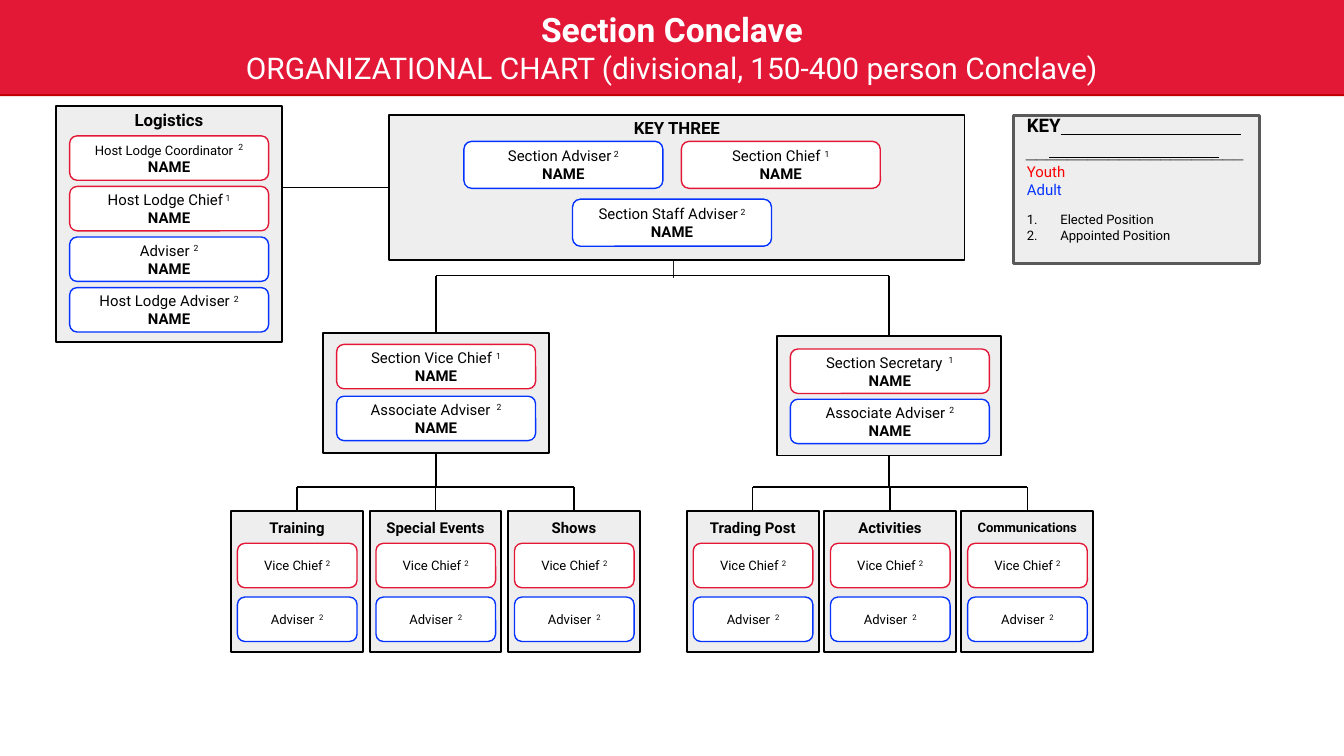
from dataclasses import dataclass
from typing import Optional

from lxml.etree import SubElement
from pptx import Presentation
from pptx.dml.color import RGBColor
from pptx.enum.shapes import MSO_CONNECTOR as Connector, MSO_SHAPE as Shape
from pptx.enum.text import MSO_ANCHOR as Anchor, MSO_AUTO_SIZE as AutoSize, PP_ALIGN as Align
from pptx.oxml.ns import qn
from pptx.util import Pt

COLORS = {
    "red": "E31837", "dark red": "C00000", "youth": "FF0000", "blue": "0432FF",
    "panel": "EEEEEE", "white": "FFFFFF", "black": "000000", "trunk": "202020", "key edge": "595959",
}
CARD_WIDTH, CARD_HEIGHT = 106.6, 23.8
DIVISION_WIDTH, DIVISION_TOP = 70.6, 273.8
BUS_TOP, FORK_TOP = 147.6, 261


@dataclass
class Box:
    left: float
    top: float
    width: float
    height: float

    def lengths(self) -> list:
        return [Pt(v) for v in (self.left, self.top, self.width, self.height)]


@dataclass
class Card:
    role: str
    mark: str
    edge: str
    box: Box
    role_size: float = 8
    named: bool = True


@dataclass
class Panel:
    box: Box
    heading: str = ""
    heading_size: float = 9


@dataclass
class Branch:
    """A lead panel with three divisions hanging below it."""
    lead: Box
    cards: list
    divisions: list
    start: float
    step: float


def color(name: str) -> RGBColor:
    return RGBColor.from_string(COLORS[name])


def style(span, size: float, ink: str = "black", bold: bool = False, font: str = "Roboto") -> None:
    span.font.name, span.font.size, span.font.bold = font, Pt(size), bold
    span.font.color.rgb = color(ink)


def paint(shape, fill: str, edge: Optional[str] = None, weight: float = 1) -> None:
    shape.fill.solid()
    shape.fill.fore_color.rgb = color(fill)
    if edge:
        shape.line.color.rgb = color(edge)
        shape.line.width = Pt(weight)
    else:
        shape.line.fill.background()


def prepare(shape, anchor=Anchor.MIDDLE):
    """Set wrapping, insets and anchor, and return the text frame."""
    frame = shape.text_frame
    frame.word_wrap, frame.auto_size, frame.vertical_anchor = True, AutoSize.NONE, anchor
    frame.margin_left = frame.margin_right = frame.margin_top = frame.margin_bottom = Pt(7.2)
    return frame


def add_block(shapes, kind, box: Box, fill: str, edge: Optional[str] = None, weight: float = 1):
    shape = shapes.add_shape(kind, *box.lengths())
    shape.shadow.inherit = False
    paint(shape, fill, edge, weight)
    return shape


def add_label(shapes, box: Box, text: str, size: float, align=Align.CENTER) -> None:
    frame = prepare(shapes.add_textbox(*box.lengths()))
    frame.text = text
    para = frame.paragraphs[0]
    para.alignment = align
    style(para.runs[0], size, bold=True)


def add_panel(shapes, panel: Panel) -> None:
    box = panel.box
    add_block(shapes, Shape.RECTANGLE, box, "panel", "black")
    if panel.heading:
        lift = 1.4 if panel.heading_size == 9 else 0
        heading_box = Box(box.left, box.top - lift, box.width, 17.3)
        add_label(shapes, heading_box, panel.heading, panel.heading_size)


def add_card(shapes, card: Card) -> None:
    shape = add_block(shapes, Shape.ROUNDED_RECTANGLE, card.box, "white", card.edge, 0.75)
    frame = prepare(shape)
    frame.text = card.role
    para = frame.paragraphs[0]
    para.alignment = Align.CENTER
    style(para.runs[0], card.role_size)
    mark = para.add_run()
    mark.text = card.mark
    style(mark, 8 if card.named else card.role_size)
    mark._r.get_or_add_rPr().set("baseline", "30000")
    if card.named:
        name = frame.add_paragraph()
        name.text = "NAME"
        name.alignment = Align.CENTER
        style(name.runs[0], 8, bold=True)


def add_line(shapes, x1: float, y1: float, x2: float, y2: float, ink: str = "black") -> None:
    line = shapes.add_connector(Connector.STRAIGHT, Pt(x1), Pt(y1), Pt(x2), Pt(y2))
    line.line.color.rgb = color(ink)
    line.line.width = Pt(0.75)
    SubElement(line._element.spPr, qn("a:effectLst"))


def set_bullet(para, numbered: bool) -> None:
    props = para._p.get_or_add_pPr()
    indent = Pt(18) if numbered else 0
    props.set("marL", str(indent))
    props.set("indent", str(-indent))
    if numbered:
        SubElement(props, qn("a:buAutoNum"), type="arabicPeriod")
    else:
        SubElement(props, qn("a:buNone"))


def fill_header(page) -> None:
    title = page.shapes.title
    title.left, title.top, title.width, title.height = Box(0, 0, 720, 50.4).lengths()
    paint(title, "red")
    strip = add_block(page.shapes, Shape.RECTANGLE, Box(0, 0, 720, 51.6), "dark red")
    title._element.addprevious(strip._element)
    frame = prepare(title)
    frame.text = "Section Conclave\nORGANIZATIONAL CHART (divisional, 150-400 person Conclave)"
    for para, size, bold in zip(frame.paragraphs, (18, 16), (True, False)):
        para.alignment = Align.CENTER
        style(para.runs[0], size, "white", bold)


def fill_key(page) -> None:
    body = page.placeholders[1]
    body.left, body.top, body.width, body.height = Box(542.9, 61.9, 131.8, 79.2).lengths()
    paint(body, "panel", "key edge", 1.5)
    frame = prepare(body, Anchor.TOP)
    frame.text = "\n".join(["_" * 21, "Youth", "Adult", "Elected Position", "Appointed Position"])
    inks = ("black", "youth", "blue", "black", "black")
    for index, (para, ink) in enumerate(zip(frame.paragraphs, inks)):
        para.alignment = Align.LEFT
        para.line_spacing = 1.0 if index else 1.5
        para.space_before = Pt(7 if index == 3 else 0)
        set_bullet(para, index > 2)
        style(para.runs[0], 7 if index > 2 else 8, ink)
    rule = frame.paragraphs[0].runs[0]
    style(rule, 10, bold=True, font="Arial")
    rule.font.italic = True
    add_label(page.shapes, Box(543, 62.2, 131, 10.1), "KEY", 10, Align.LEFT)
    add_line(page.shapes, 568.4, 72, 664.8, 72)
    add_line(page.shapes, 562, 84.3, 653, 84.3)


def add_branch(page, branch: Branch) -> None:
    lead = branch.lead
    center = lead.left + lead.width / 2
    add_line(page.shapes, center, BUS_TOP, center, lead.top)
    add_panel(page.shapes, Panel(lead))
    for card in branch.cards:
        add_card(page.shapes, card)
    add_line(page.shapes, center, lead.top + lead.height, center, FORK_TOP)
    lefts = [branch.start + branch.step * i for i in range(len(branch.divisions))]
    middle = DIVISION_WIDTH / 2
    add_line(page.shapes, lefts[0] + middle, FORK_TOP, lefts[-1] + middle, FORK_TOP)
    for left, name in zip(lefts, branch.divisions):
        add_line(page.shapes, left + middle, FORK_TOP, left + middle, DIVISION_TOP)
        group = page.shapes.add_group_shape().shapes
        longest_word = max(len(word) for word in name.split())
        size = 7 if longest_word > 12 else 8
        add_panel(group, Panel(Box(left, DIVISION_TOP, DIVISION_WIDTH, 75.6), name, size))
        for role, mark, edge, drop in (("Vice Chief ", "2", "red", 17.3), ("Adviser ", " 2", "blue", 46.1)):
            box = Box(left + 3.4, DIVISION_TOP + drop, 64.1, CARD_HEIGHT)
            add_card(group, Card(role, mark, edge, box, 7, False))


def card_at(role: str, mark: str, edge: str, left: float, top: float,
            height: float = CARD_HEIGHT, size: float = 8) -> Card:
    return Card(role, mark, edge, Box(left, top, CARD_WIDTH, height), size)


def main() -> None:
    deck = Presentation()
    deck.slide_width, deck.slide_height = Pt(720), Pt(405)
    page = deck.slides.add_slide(deck.slide_layouts[1])
    fill_header(page)
    fill_key(page)

    add_line(page.shapes, 360.7, 110.2, 360.7, 149, "trunk")
    add_panel(page.shapes, Panel(Box(208.5, 61.4, 308.2, 77.8), "KEY THREE"))
    add_panel(page.shapes, Panel(Box(30, 56.9, 121, 126.5), "Logistics"))
    add_line(page.shapes, 151, 100.3, 208.5, 100.3)
    key_three = [
        card_at("Section Chief ", "1", "red", 365, 75.7, 25.2),
        card_at("Section Adviser", " 2", "blue", 248.5, 75.7, 25.2),
        card_at("Section Staff Adviser", " 2", "blue", 306.7, 106.7, 25.2),
    ]
    logistics = [("Host Lodge Coordinator ", " 2", "red", 7), ("Host Lodge Chief", " 1", "red", 8),
                 ("Adviser ", "2", "blue", 8), ("Host Lodge Adviser ", "2", "blue", 8)]
    hosts = [card_at(role, mark, edge, 37.3, 72.8 + 27.1 * i, size=size)
             for i, (role, mark, edge, size) in enumerate(logistics)]
    for card in key_three + hosts:
        add_card(page.shapes, card)

    add_line(page.shapes, 233.6, BUS_TOP, 476.3, BUS_TOP)
    add_branch(page, Branch(
        Box(173.1, 178.5, 121, 64.2),
        [card_at("Section Vice Chief ", "1", "red", 180.3, 184.5),
         card_at("Associate Adviser ", " 2", "blue", 180.3, 212.3)],
        ["Training", "Special Events", "Shows"], 123.8, 74.2))
    add_branch(page, Branch(
        Box(416.2, 180, 120.2, 64.1),
        [card_at("Section Secretary ", " 1", "red", 423.4, 187),
         card_at("Associate Adviser ", "2", "blue", 423.4, 213.9)],
        ["Trading Post", "Activities", "Communications"], 368, 73.5))
    deck.save("out.pptx")


if __name__ == "__main__":
    main()
